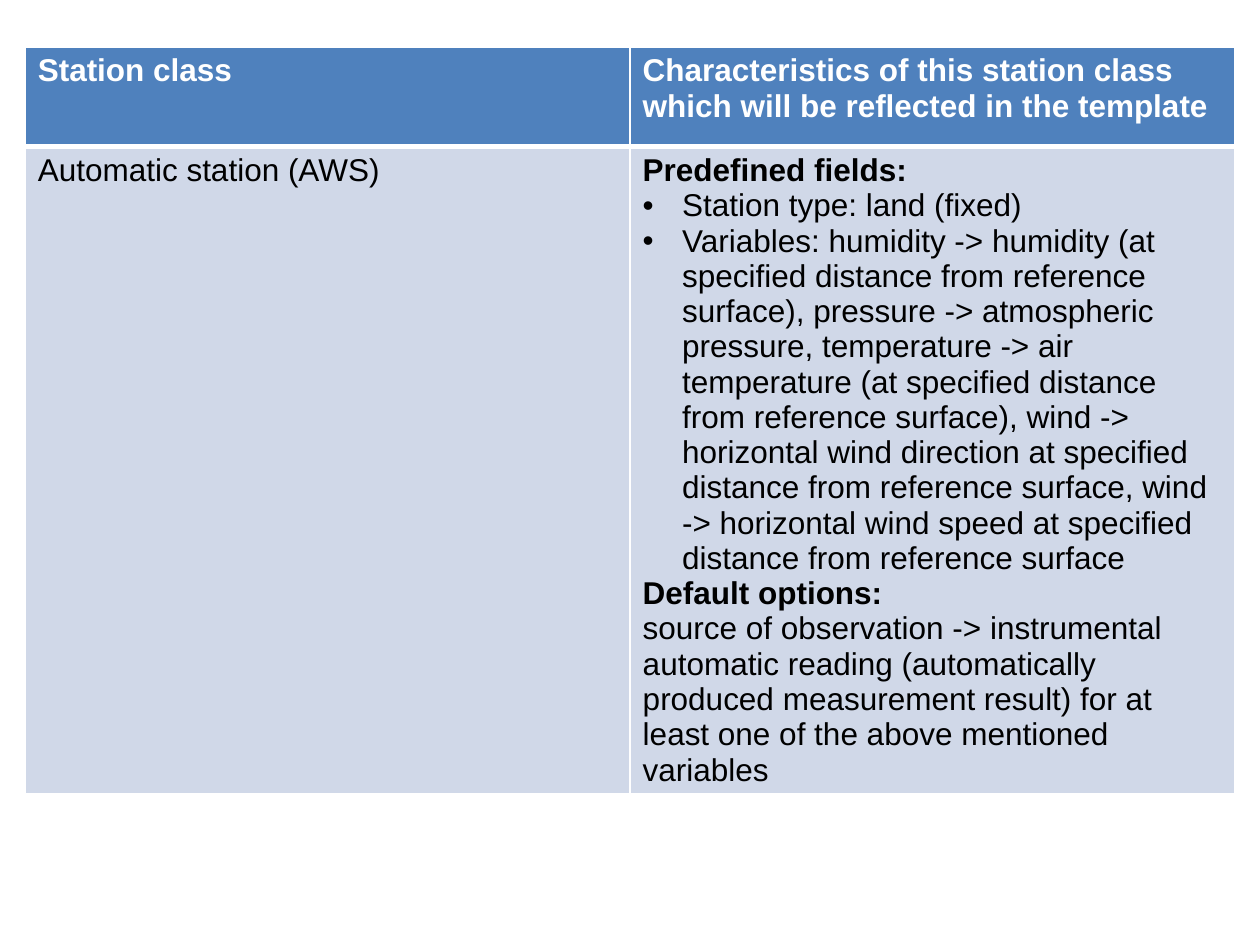
import pptx
import pptx.dml.color
import pptx.util
from lxml import etree
from pptx.oxml.ns import qn

Pt = pptx.util.Pt
COLORS = {"header": "4F81BD", "body": "D0D8E8", "white": "FFFFFF", "black": "000000"}
HAIRLINE, HEADER_RULE = 1, 3
BULLET_INDENT = 22.5

# Each paragraph is (text, bold, bulleted).
HEADINGS = [
    [("Station class", True, False)],
    [("Characteristics of this station class which will be reflected in the template",
      True, False)],
]
AUTOMATIC_STATION = [
    [("Automatic station (AWS)", False, False)],
    [
        ("Predefined fields:", True, False),
        ("Station type: land (fixed)", False, True),
        ("Variables: humidity -> humidity (at specified distance from reference surface), "
         "pressure -> atmospheric pressure, temperature -> air temperature (at specified "
         "distance from reference surface), wind -> horizontal wind direction at specified "
         "distance from reference surface, wind -> horizontal wind speed at specified "
         "distance from reference surface", False, True),
        ("Default options:", True, False),
        ("source of observation -> instrumental automatic reading (automatically produced "
         "measurement result) for at least one of the above mentioned variables",
         False, False),
    ],
]


def rgb(name):
    return pptx.dml.color.RGBColor.from_string(COLORS[name])


def add_borders(cell, widths):
    """Draw white borders; widths are points for left, right, top and bottom."""
    properties = cell._tc.get_or_add_tcPr()
    for side, width in zip("LRTB", widths):
        line = etree.SubElement(properties, qn(f"a:ln{side}"), w=str(Pt(width)))
        fill = etree.SubElement(line, qn("a:solidFill"))
        etree.SubElement(fill, qn("a:srgbClr"), val=COLORS["white"])


def add_bullet(paragraph):
    properties = paragraph._p.get_or_add_pPr()
    properties.set("marL", str(Pt(BULLET_INDENT)))
    properties.set("indent", str(-Pt(BULLET_INDENT)))
    etree.SubElement(properties, qn("a:buFont"), typeface="Arial")
    etree.SubElement(properties, qn("a:buChar"), char="•")


def fill_cell(cell, content, fill, text_color, borders):
    add_borders(cell, borders)
    cell.fill.solid()
    cell.fill.fore_color.rgb = rgb(fill)
    frame = cell.text_frame
    for index, (text, bold, bulleted) in enumerate(content):
        paragraph = frame.add_paragraph() if index else frame.paragraphs[0]
        paragraph.text = text
        if bulleted:
            add_bullet(paragraph)
        paragraph.font.name = "Arial"
        paragraph.font.size = Pt(18)
        paragraph.font.bold = bold
        paragraph.font.color.rgb = rgb(text_color)


def add_station_table(slide, left, top, width, row_heights):
    frame = slide.shapes.add_table(2, 2, Pt(left), Pt(top), Pt(width), Pt(sum(row_heights)))
    table = frame.table
    for row, height in zip(table.rows, row_heights):
        row.height = Pt(height)
    header_borders = (HAIRLINE, HAIRLINE, HAIRLINE, HEADER_RULE)
    body_borders = (HAIRLINE, HAIRLINE, HEADER_RULE, HAIRLINE)
    for column in range(2):
        fill_cell(table.cell(0, column), HEADINGS[column], "header", "white", header_borders)
        fill_cell(table.cell(1, column), AUTOMATIC_STATION[column], "body", "black",
                  body_borders)


def main():
    deck = pptx.Presentation()
    deck.slide_width, deck.slide_height = Pt(720), Pt(540)
    slide = deck.slides.add_slide(deck.slide_layouts[6])
    add_station_table(slide, left=14.4, top=26.8, width=691.4, row_heights=(57, 369))
    deck.save("out.pptx")


if __name__ == "__main__":
    main()
